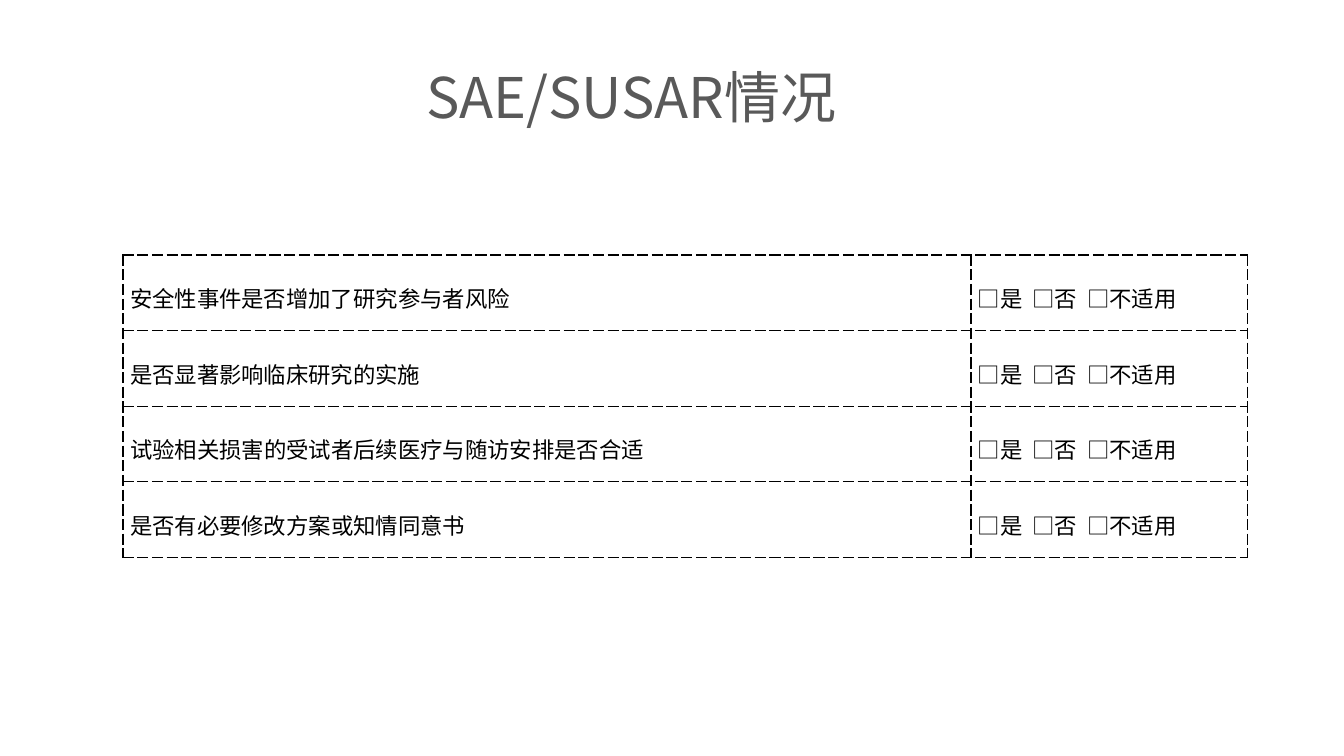
from dataclasses import dataclass

from lxml.etree import SubElement
from pptx import Presentation
from pptx.dml.color import RGBColor
from pptx.enum.text import MSO_ANCHOR, MSO_AUTO_SIZE, PP_ALIGN
from pptx.oxml.ns import qn
from pptx.slide import Slide
from pptx.table import _Cell as Cell
from pptx.text.text import _Paragraph as Paragraph
from pptx.util import Inches, Pt


@dataclass(frozen=True)
class Theme:
    sans: str = "Noto Sans CJK SC"
    serif: str = "Times New Roman"
    title_color: RGBColor = RGBColor(0x59, 0x59, 0x59)
    text_color: RGBColor = RGBColor(0, 0, 0)
    border_color: str = "000000"
    title_size: Pt = Pt(40)
    text_size: Pt = Pt(16)
    border_width: Pt = Pt(1)


@dataclass(frozen=True)
class Span:
    text: str
    font: str


THEME = Theme()
OPTIONS = [Span("□是  □否  □不适用", THEME.sans)]
QUESTIONS = [
    [Span("安全性事件是否增加了", THEME.sans), Span("研究参与者", THEME.serif),
     Span("风险", THEME.sans)],
    [Span("是否显著影响临床研究的实施", THEME.sans)],
    [Span("试验相关损害", THEME.sans), Span("的受试者", THEME.serif),
     Span("后续医疗与随访安排是否合适", THEME.sans)],
    [Span("是否有必要修改方案", THEME.sans), Span("或知情同意书", THEME.serif)],
]
COLUMN_WIDTHS = (8.41, 2.74)
ROW_HEIGHT = 0.75


def add_span(para: Paragraph, span: Span, size: Pt, color: RGBColor) -> None:
    """Append a run, with the sans face for its East Asian glyphs."""
    run = para.add_run()
    run.text = span.text
    run.font.name = span.font
    run.font.size = size
    run.font.color.rgb = color
    SubElement(run.font._element, qn("a:ea"), typeface=THEME.sans)


def set_dashed_borders(cell: Cell) -> None:
    properties = cell._tc.get_or_add_tcPr()
    for index, side in enumerate(("lnL", "lnR", "lnT", "lnB")):
        line = properties.makeelement(qn(f"a:{side}"), {"w": str(THEME.border_width)})
        fill = SubElement(line, qn("a:solidFill"))
        SubElement(fill, qn("a:srgbClr"), val=THEME.border_color)
        SubElement(line, qn("a:prstDash"), val="sysDash")
        properties.insert(index, line)


def fill_cell(cell: Cell, spans: list[Span]) -> None:
    cell.fill.background()
    cell.vertical_anchor = MSO_ANCHOR.MIDDLE
    cell.margin_left = cell.margin_right = Inches(0.07)
    cell.margin_top = cell.margin_bottom = 0
    para = cell.text_frame.paragraphs[0]
    para.alignment = PP_ALIGN.JUSTIFY
    para.line_spacing = 1.3
    for span in spans:
        add_span(para, span, THEME.text_size, THEME.text_color)
    set_dashed_borders(cell)


def add_title(page: Slide, text: str) -> None:
    box = page.shapes.add_textbox(Inches(4.13), Inches(0.57), Inches(4.38), Inches(0.77))
    frame = box.text_frame
    frame.word_wrap = True
    frame.auto_size = MSO_AUTO_SIZE.SHAPE_TO_FIT_TEXT
    add_span(frame.paragraphs[0], Span(text, THEME.sans), THEME.title_size, THEME.title_color)


def add_checklist(page: Slide) -> None:
    table = page.shapes.add_table(
        len(QUESTIONS), len(COLUMN_WIDTHS), Inches(1.22), Inches(2.53),
        Inches(sum(COLUMN_WIDTHS)), Inches(ROW_HEIGHT * len(QUESTIONS)),
    ).table
    table.first_row = table.horz_banding = False
    for column, width in zip(table.columns, COLUMN_WIDTHS):
        column.width = Inches(width)
    for row, question in zip(table.rows, QUESTIONS):
        row.height = Inches(ROW_HEIGHT)
        for cell, spans in zip(row.cells, (question, OPTIONS)):
            fill_cell(cell, spans)


def main() -> None:
    deck = Presentation()
    deck.slide_width, deck.slide_height = Inches(13.33), Inches(7.5)
    page = deck.slides.add_slide(deck.slide_layouts[6])
    add_title(page, "SAE/SUSAR情况")
    add_checklist(page)
    deck.save("out.pptx")


if __name__ == "__main__":
    main()
